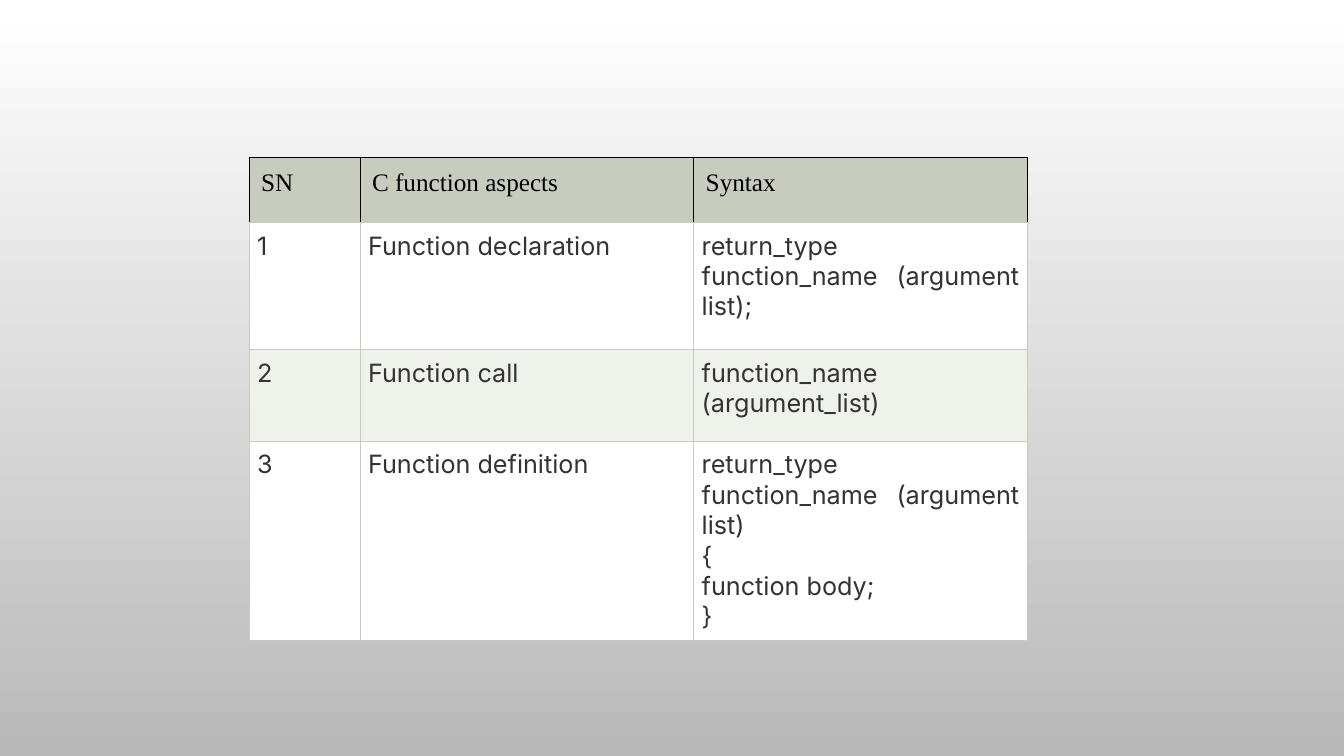
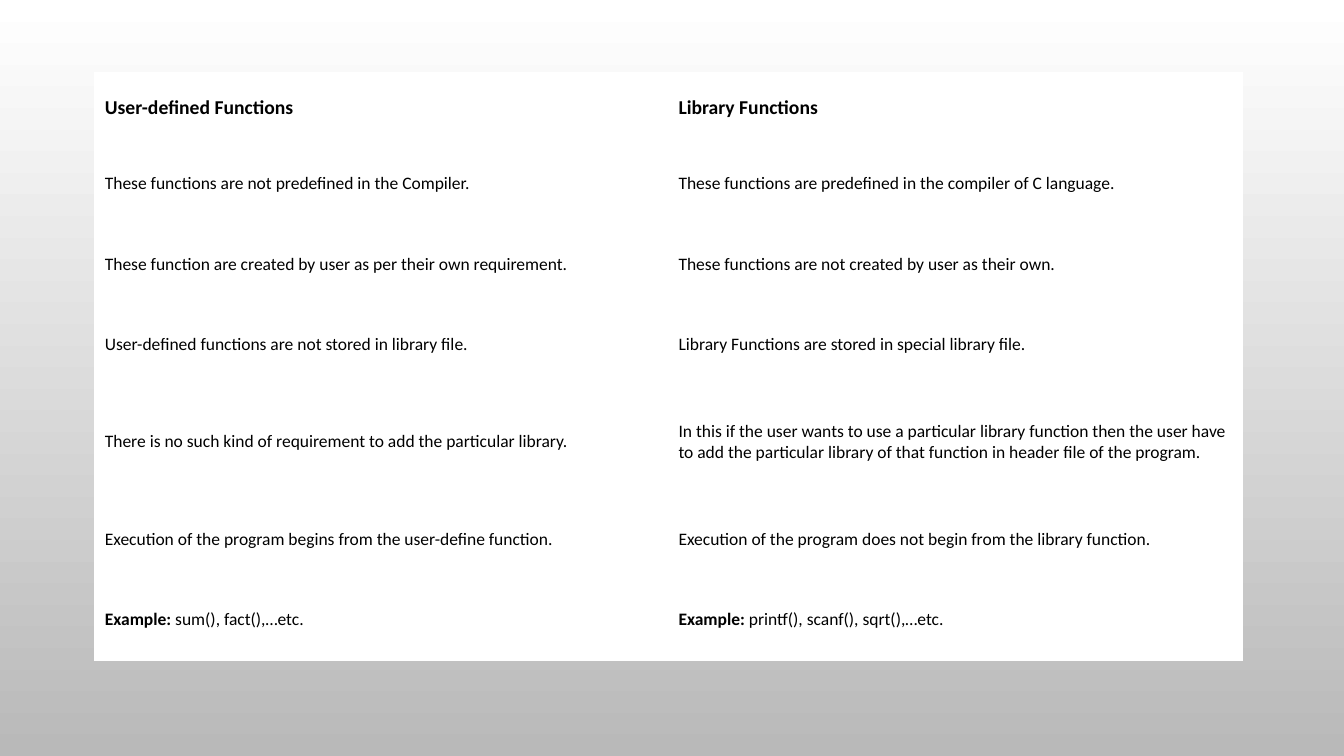
from lxml import etree
from pptx import Presentation
from pptx.dml.color import RGBColor
from pptx.enum.text import MSO_ANCHOR, PP_ALIGN
from pptx.oxml.ns import qn
from pptx.util import Inches, Pt

TOP, MIDDLE = MSO_ANCHOR.TOP, MSO_ANCHOR.MIDDLE
LEFT, JUSTIFY = PP_ALIGN.LEFT, PP_ALIGN.JUSTIFY
BLANK = 6
COLORS = {
    "white": "FFFFFF",
    "grey": "B9B9B9",
    "black": "000000",
    "text": "333333",
    "sage": "C7CCBE",
    "pale": "EFF1EB",
}

SYNTAX = [
    ["SN", "C function aspects", "Syntax"],
    ["1", "Function declaration", "return_type function_name (argument list);"],
    ["2", "Function call", "function_name (argument_list)"],
    ["3", "Function definition",
     "return_type function_name (argument list)\n{\nfunction body;\n}"],
]
KINDS = [
    ["User-defined Functions", "Library Functions"],
    ["These functions are not predefined in the Compiler.",
     "These functions are predefined in the compiler of C language."],
    ["These function are created by user as per their own requirement.",
     "These functions are not created by user as their own."],
    ["User-defined functions are not stored in library file.",
     "Library Functions are stored in special library file."],
    ["There is no such kind of requirement to add the particular library.",
     "In this if the user wants to use a particular library function then "
     "the user have to add the particular library of that function in "
     "header file of the program."],
    ["Execution of the program begins from the user-define function.",
     "Execution of the program does not begin from the library function."],
    ["Example: sum(), fact(),…etc.", "Example: printf(), scanf(), sqrt(),…etc."],
]
LABEL = "Example:"


def color(name):
    return RGBColor.from_string(COLORS[name])


def set_back(master):
    fill = master.background.fill
    fill.gradient()
    fill.gradient_angle = 270
    for stop, name, place in zip(fill.gradient_stops, ("white", "grey"), (0, 1)):
        stop.color.rgb = color(name)
        stop.position = place


def add_grid(slide, left, top, widths, heights):
    table = slide.shapes.add_table(
        len(heights), len(widths), Inches(left), Inches(top),
        Inches(sum(widths)), Inches(sum(heights))).table
    table.first_row = table.horz_banding = False
    for col, width in zip(table.columns, widths):
        col.width = Inches(width)
    for row, height in zip(table.rows, heights):
        row.height = Inches(height)
    return table


def set_edges(cell, sides, base):
    props = cell._tc.get_or_add_tcPr()
    for side, name in zip("LRTB", (sides, sides, sides, base)):
        line = etree.SubElement(props, qn(f"a:ln{side}"), w=str(Pt(0.75)))
        solid = etree.SubElement(line, qn("a:solidFill"))
        etree.SubElement(solid, qn("a:srgbClr"), val=COLORS[name])


def set_cell(cell, text, fill, pads, face, size, ink,
             bold=False, align=LEFT, anchor=TOP):
    cell.fill.solid()
    cell.fill.fore_color.rgb = color(fill)
    cell.margin_left = cell.margin_right = Inches(pads[0])
    cell.margin_top = cell.margin_bottom = Inches(pads[1])
    cell.vertical_anchor = anchor
    cell.text = text
    for para in cell.text_frame.paragraphs:
        para.alignment = align
        font = para.font
        font.name, font.size, font.bold = face, Pt(size), bold
        font.color.rgb = color(ink)


def set_label(cell):
    para = cell.text_frame.paragraphs[0]
    rest = para.text.removeprefix(LABEL)
    para.runs[0].text = LABEL
    para.runs[0].font.bold = True
    para.add_run().text = rest


def add_syntax(slide):
    table = add_grid(slide, 2.47, 1.56, [1.1, 3.31, 3.31],
                     [0.65, 1.26, 0.91, 1.61])
    for i, row in enumerate(SYNTAX):
        for j, text in enumerate(row):
            cell = table.cell(i, j)
            if i == 0:
                set_edges(cell, "black", "sage")
                set_cell(cell, text, "sage", (0.12, 0.12),
                         "Times New Roman", 18, "black")
            else:
                set_edges(cell, "sage", "sage")
                set_cell(cell, text, "white" if i % 2 else "pale",
                         (0.08, 0.08), "Inter", 18, "text", align=JUSTIFY)


def add_kinds(slide):
    table = add_grid(slide, 0.94, 0.72, [5.69] * 2,
                     [0.7, 0.8, 0.8, 0.8, 1.13, 0.8, 0.8])
    for i, row in enumerate(KINDS):
        head = i == 0
        for j, text in enumerate(row):
            cell = table.cell(i, j)
            set_cell(cell, text, "white", (0.1, 0.1 if head else 0.15),
                     "Calibri", 14 if head else 12.5, "black",
                     bold=head, anchor=MIDDLE)
            if text.startswith(LABEL):
                set_label(cell)


def main():
    deck = Presentation()
    deck.slide_width, deck.slide_height = Inches(13.33), Inches(7.5)
    set_back(deck.slide_master)
    for build in (add_syntax, add_kinds):
        build(deck.slides.add_slide(deck.slide_layouts[BLANK]))
    deck.save("out.pptx")


if __name__ == "__main__":
    main()
